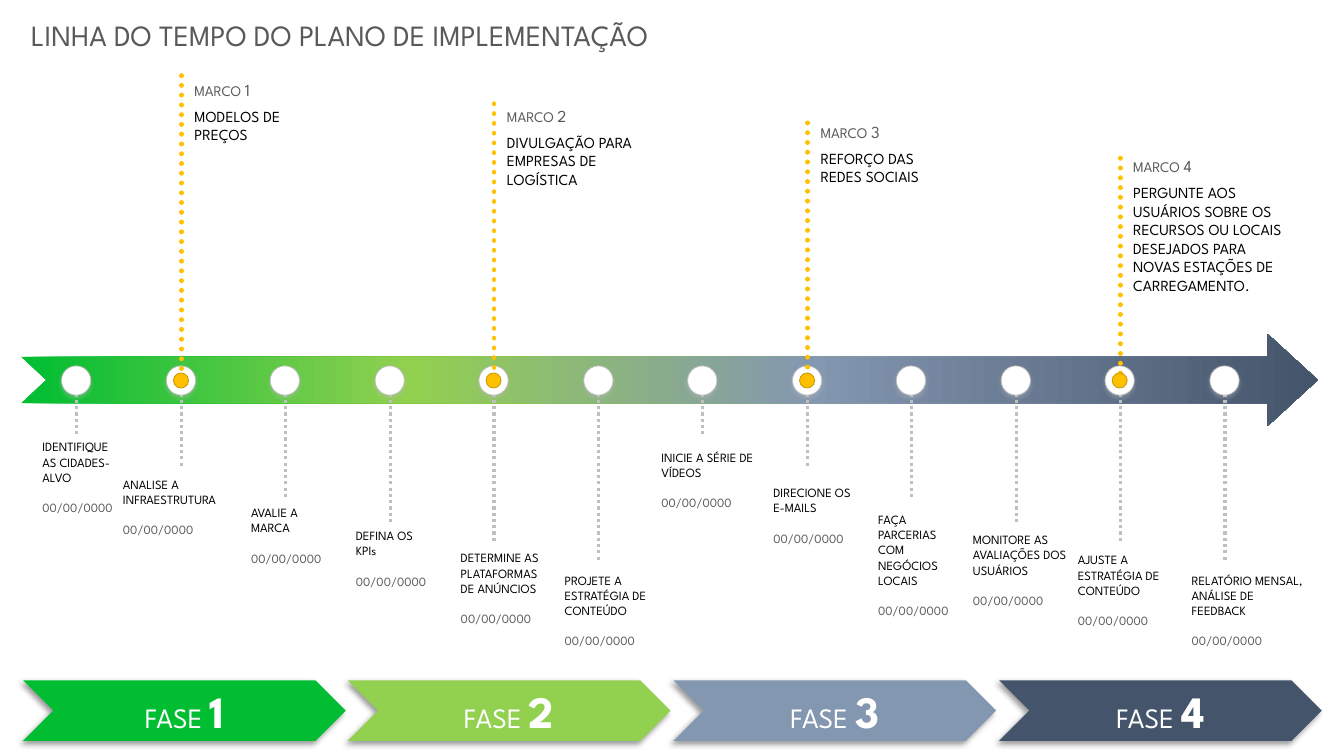
from dataclasses import dataclass

import pptx
import pptx.dml.color
import pptx.enum.dml
import pptx.enum.shapes
import pptx.enum.text
import pptx.oxml
import pptx.oxml.ns
import pptx.util

PX = 9144  # EMU per px, 100 px to the inch
SHAPE = pptx.enum.shapes.MSO_SHAPE
ANCHOR = pptx.enum.text.MSO_ANCHOR
ALIGN = pptx.enum.text.PP_ALIGN
qn = pptx.oxml.ns.qn
NS = pptx.oxml.ns.nsdecls("a")


@dataclass(frozen=True)
class Theme:
    font: str = "League Spartan"
    white: str = "FFFFFF"
    black: str = "000000"
    gray: str = "595959"
    light: str = "BFBFBF"
    gold: str = "FFC000"
    dark_gold: str = "BF9000"
    phases: tuple[str, ...] = ("00BD32", "92D050", "8497B0", "44546A")
    stops: tuple[int, ...] = (0, 30, 61, 100)
    title_pt: float = 21
    task_pt: float = 9
    marco_pt: float = 10.5
    milestone_pt: float = 11
    number_pt: float = 12
    phase_pt: float = 20
    phase_number_pt: float = 32


@dataclass(frozen=True)
class Shadow:
    color: str
    alpha: int
    blur: float
    dist: float
    angle: int


@dataclass(frozen=True)
class Task:
    text: str
    left: int
    top: int
    width: int


@dataclass(frozen=True)
class Milestone:
    text: str
    station: int
    line_top: int
    label_top: int
    width: int


T = Theme()
PHASE_SHADOW = Shadow(T.black, 40, 4, 3, 135)
STATION_SHADOW = Shadow(T.light, 35, 3.1, 1.8, 90)
AXIS_Y = 378
STEM_ENDS = (433, 463, 493, 518, 538, 558)
TASKS = (
    Task("IDENTIFIQUE AS CIDADES-ALVO", 42, 431, 80),
    Task("ANALISE A INFRAESTRUTURA", 122, 468, 104),
    Task("AVALIE A MARCA", 249, 496, 80),
    Task("DEFINA OS KPIs", 353, 519, 80),
    Task("DETERMINE AS PLATAFORMAS DE ANÚNCIOS", 457, 541, 90),
    Task("PROJETE A ESTRATÉGIA DE CONTEÚDO", 560, 563, 94),
    Task("INICIE A SÉRIE DE VÍDEOS", 656, 441, 96),
    Task("DIRECIONE OS E-MAILS", 767, 476, 80),
    Task("FAÇA PARCERIAS COM NEGÓCIOS LOCAIS", 871, 503, 80),
    Task("MONITORE AS AVALIAÇÕES DOS USUÁRIOS", 965, 523, 99),
    Task("AJUSTE A ESTRATÉGIA DE CONTEÚDO", 1069, 543, 99),
    Task("RELATÓRIO MENSAL, ANÁLISE DE FEEDBACK", 1182, 563, 117),
)
MILESTONES = (
    Milestone("MODELOS DE PREÇOS", 1, 75, 74, 148),
    Milestone("DIVULGAÇÃO PARA EMPRESAS DE LOGÍSTICA", 4, 103, 100, 146),
    Milestone("REFORÇO DAS REDES SOCIAIS", 7, 122, 116, 137),
    Milestone("PERGUNTE AOS USUÁRIOS SOBRE OS RECURSOS OU LOCAIS DESEJADOS "
              "PARA NOVAS ESTAÇÕES DE CARREGAMENTO.", 10, 157, 150, 168),
)


def rgb(color: str) -> pptx.dml.color.RGBColor:
    return pptx.dml.color.RGBColor.from_string(color)


def px(*values: int) -> list[pptx.util.Emu]:
    return [pptx.util.Emu(v * PX) for v in values]


def station_x(i: int) -> int:
    return 76 + round(i * 1139 / 11)


def add_run(p, text: str, *, size: float, color: str, bold: bool = False) -> None:
    r = p.add_run()
    r.text = text
    r.font.name = T.font
    r.font.size = pptx.util.Pt(size)
    r.font.bold = bold
    r.font.color.rgb = rgb(color)


def add_box(shapes, left: int, top: int, width: int, height: int):
    tf = shapes.add_textbox(*px(left, top, width, height)).text_frame
    tf.word_wrap = True
    return tf


def add_shape(shapes, kind, box: tuple[int, ...], *, fill: str | None = None,
              line: str | None = None, shadow: Shadow | None = None):
    s = shapes.add_shape(kind, *px(*box))
    if fill:
        s.fill.solid()
        s.fill.fore_color.rgb = rgb(fill)
    if line:
        s.line.color.rgb = rgb(line)
        s.line.width = pptx.util.Pt(0.5)
    else:
        s.line.fill.background()
    s.shadow.inherit = False
    if shadow:
        s._element.spPr.find(qn("a:effectLst")).append(pptx.oxml.parse_xml(
            f'<a:outerShdw {NS} blurRad="{round(shadow.blur * 12700)}" '
            f'dist="{round(shadow.dist * 12700)}" dir="{shadow.angle * 60000}">'
            f'<a:srgbClr val="{shadow.color}"><a:alpha val="{shadow.alpha * 1000}"/>'
            f'</a:srgbClr></a:outerShdw>'))
    return s


def add_dotted_line(shapes, x: int, top: int, bottom: int, *, color: str,
                    width: float, cap: str = "flat") -> None:
    c = shapes.add_connector(pptx.enum.shapes.MSO_CONNECTOR.STRAIGHT,
                             *px(x, top, x, bottom))
    c.line.color.rgb = rgb(color)
    c.line.width = pptx.util.Pt(width)
    c.line.dash_style = pptx.enum.dml.MSO_LINE.ROUND_DOT
    sp = c._element.spPr
    sp.find(qn("a:ln")).set("cap", cap)
    sp.append(pptx.oxml.parse_xml(f"<a:effectLst {NS}/>"))


def add_title(slide, text: str) -> None:
    s = slide.shapes.title
    s.left, s.top, s.width, s.height = px(21, 12, 920, 45)
    tf = s.text_frame
    tf.auto_size = pptx.enum.text.MSO_AUTO_SIZE.NONE
    tf.vertical_anchor = ANCHOR.TOP
    p = tf.paragraphs[0]
    p.alignment = ALIGN.LEFT
    add_run(p, text, size=T.title_pt, color=T.gray)


def add_phase(shapes, i: int, color: str) -> None:
    s = add_shape(shapes, SHAPE.CHEVRON, (23 + i * 968 // 3, 675, 320, 60),
                  fill=color, shadow=PHASE_SHADOW)
    s.text_frame.vertical_anchor = ANCHOR.MIDDLE
    p = s.text_frame.paragraphs[0]
    p.alignment = ALIGN.CENTER
    add_run(p, "FASE ", size=T.phase_pt, color=T.white)
    add_run(p, str(i + 1), size=T.phase_number_pt, color=T.white, bold=True)


def add_arrow(shapes) -> None:
    s = add_shape(shapes, SHAPE.NOTCHED_RIGHT_ARROW, (21, 331, 1286, 92))
    s.adjustments[0], s.adjustments[1] = 0.5, 0.545
    s.fill.gradient()
    s.fill.gradient_angle = 0
    stops = s._element.spPr.find(qn("a:gradFill")).find(qn("a:gsLst"))
    for old in list(stops):
        stops.remove(old)
    for stop, color in zip(T.stops, T.phases):
        stops.append(pptx.oxml.parse_xml(
            f'<a:gs {NS} pos="{stop * 1000}"><a:srgbClr val="{color}"/></a:gs>'))


def add_task(shapes, task: Task) -> None:
    tf = add_box(shapes, task.left, task.top, task.width, 90)
    tf.margin_left, tf.margin_top, tf.margin_right, tf.margin_bottom = px(0, 5, 0, 1)
    add_run(tf.paragraphs[0], task.text, size=T.task_pt, color=T.black)
    p = tf.add_paragraph()
    p.space_before = pptx.util.Pt(11)
    add_run(p, "00/00/0000", size=T.task_pt, color=T.gray)


def add_milestone(shapes, number: int, m: Milestone) -> None:
    group = shapes.add_group_shape().shapes
    x = station_x(m.station)
    add_dotted_line(group, x, m.line_top, 376, color=T.gold, width=3.5, cap="rnd")
    add_shape(group, SHAPE.OVAL, (x - 8, 370, 15, 15), fill=T.gold, line=T.dark_gold)
    p = add_box(group, x + 3, m.label_top, 117, 26).paragraphs[0]
    add_run(p, "MARCO ", size=T.marco_pt, color=T.gray)
    add_run(p, str(number), size=T.number_pt, color=T.gray)
    tf = add_box(group, x + 3, m.label_top + 27, m.width, 173)
    add_run(tf.paragraphs[0], m.text, size=T.milestone_pt, color=T.black)


def main() -> None:
    prs = pptx.Presentation()
    prs.slide_width, prs.slide_height = px(1333, 750)
    slide = prs.slides.add_slide(prs.slide_layouts[5])
    shapes = slide.shapes
    add_title(slide, "LINHA DO TEMPO DO PLANO DE IMPLEMENTAÇÃO")

    # Phases and time axis
    for i, color in enumerate(T.phases):
        add_phase(shapes, i, color)
    add_arrow(shapes)

    # Stations with their tasks
    for i, task in enumerate(TASKS):
        x = station_x(i)
        add_dotted_line(shapes, x, AXIS_Y, STEM_ENDS[i % len(STEM_ENDS)],
                        color=T.light, width=2.25)
        add_shape(shapes, SHAPE.OVAL, (x - 15, 363, 29, 29), fill=T.white,
                  line=T.light, shadow=STATION_SHADOW)
        add_task(shapes, task)

    # Milestones above the axis
    for number, milestone in enumerate(MILESTONES, 1):
        add_milestone(shapes, number, milestone)

    prs.save("out.pptx")


if __name__ == "__main__":
    main()
